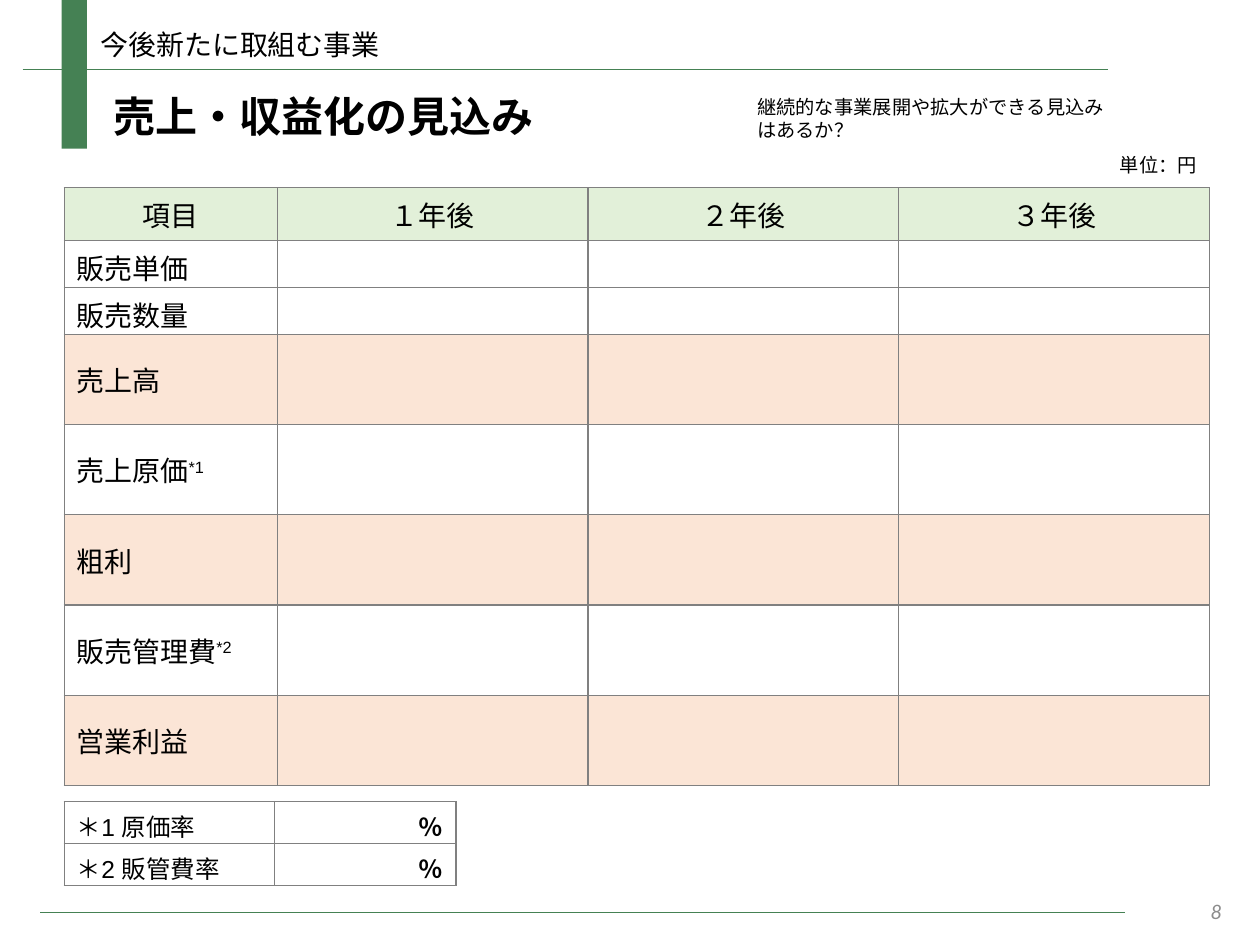
from dataclasses import dataclass
from typing import NamedTuple

from lxml.etree import SubElement
from pptx import Presentation
from pptx.dml.color import RGBColor
from pptx.enum.shapes import MSO_CONNECTOR, MSO_SHAPE
from pptx.enum.text import MSO_ANCHOR, PP_ALIGN
from pptx.oxml.ns import qn
from pptx.util import Pt


@dataclass(frozen=True)
class Theme:
    green: str = "458154"
    header: str = "E2F0D9"
    total: str = "FBE5D6"
    grid: str = "808080"
    ink: str = "000000"
    muted: str = "8C8C8C"
    latin: str = "Arial"
    number: str = "Calibri"
    japanese: str = "Noto Sans CJK JP"
    title: float = 24
    body: float = 16
    footnote: float = 14
    page: float = 12
    small: float = 11
    line: float = 0.75


T = Theme()


class Style(NamedTuple):
    size: float
    align: PP_ALIGN = PP_ALIGN.LEFT
    bold: bool = False
    italic: bool = False
    font: str = T.latin
    color: str = T.ink


class Label(NamedTuple):
    text: str
    box: tuple[float, float, float, float]
    style: Style
    anchor: MSO_ANCHOR = MSO_ANCHOR.TOP


class Cell(NamedTuple):
    text: str
    style: Style
    mark: str = ""


class Row(NamedTuple):
    height: float
    cells: list[Cell]
    fill: str = ""
    tight: bool = False


def rgb(value: str) -> RGBColor:
    return RGBColor.from_string(value)


def write(p, text: str, style: Style, mark: str = "") -> None:
    """Fill a paragraph; mark is an optional superscript note."""
    p.alignment = style.align
    f = p.font
    f.name, f.size = style.font, Pt(style.size)
    f.bold, f.italic = style.bold, style.italic
    f.color.rgb = rgb(style.color)
    SubElement(p._p.pPr.find(qn("a:defRPr")), qn("a:ea"), typeface=T.japanese)
    if text:
        p.add_run().text = text
    if mark:
        r = p.add_run()
        r.text = mark
        r._r.get_or_add_rPr().set("baseline", "30000")


def add_label(s, label: Label) -> None:
    tf = s.shapes.add_textbox(*map(Pt, label.box)).text_frame
    tf.word_wrap = True
    tf.vertical_anchor = label.anchor
    write(tf.paragraphs[0], label.text, label.style)


def add_rule(s, left: float, top: float, width: float) -> None:
    line = s.shapes.add_connector(
        MSO_CONNECTOR.STRAIGHT, Pt(left), Pt(top), Pt(left + width), Pt(top))
    line.line.color.rgb = rgb(T.green)
    line.line.width = Pt(T.line)
    SubElement(line._element.spPr, qn("a:effectLst"))


def add_borders(cell) -> None:
    tc_pr = cell._tc.get_or_add_tcPr()
    for i, side in enumerate(("lnL", "lnR", "lnT", "lnB")):
        ln = SubElement(tc_pr, qn(f"a:{side}"), w=str(Pt(T.line)))
        SubElement(SubElement(ln, qn("a:solidFill")), qn("a:srgbClr"), val=T.grid)
        tc_pr.remove(ln)
        tc_pr.insert(i, ln)


def add_grid(s, left: float, top: float, widths: list[float], rows: list[Row]) -> None:
    heights = [row.height for row in rows]
    table = s.shapes.add_table(len(rows), len(widths), Pt(left), Pt(top),
                               Pt(sum(widths)), Pt(sum(heights))).table
    table.first_row = table.horz_banding = False
    for column, width in zip(table.columns, widths):
        column.width = Pt(width)
    for i, row in enumerate(rows):
        table.rows[i].height = Pt(row.height)
        for cell, content in zip(table.rows[i].cells, row.cells):
            cell.vertical_anchor = MSO_ANCHOR.MIDDLE
            if row.tight:
                cell.margin_bottom = Pt(0)
            if row.fill:
                cell.fill.solid()
                cell.fill.fore_color.rgb = rgb(row.fill)
            else:
                cell.fill.background()
            add_borders(cell)
            write(cell.text_frame.paragraphs[0], content.text, content.style,
                  content.mark)


BODY = Style(T.body)
HEAD = Style(T.body, PP_ALIGN.CENTER)
NOTE = Style(T.footnote)
PERCENT = Style(T.footnote, PP_ALIGN.RIGHT, bold=True, font=T.japanese)


def item_row(name: str, mark: str = "", height: float = 51.6, fill: str = "",
             tight: bool = False) -> Row:
    return Row(height, [Cell(name, BODY, mark)] + [Cell("", BODY)] * 3, fill, tight)


def rate_row(name: str) -> Row:
    return Row(24, [Cell(name, NOTE), Cell("％", PERCENT)], tight=True)


FORECAST = [
    Row(30.3, [Cell(t, HEAD) for t in ("項目", "１年後", "２年後", "３年後")], T.header),
    item_row("販売単価", height=26.5, tight=True),
    item_row("販売数量", height=26.5, tight=True),
    item_row("売上高", fill=T.total),
    item_row("売上原価", "*1"),
    item_row("粗利", fill=T.total),
    item_row("販売管理費", "*2"),
    item_row("営業利益", fill=T.total),
]
RATES = [rate_row("＊1 原価率"), rate_row("＊2 販管費率")]

LABELS = [
    Label("8", (543, 506, 162, 29),
          Style(T.page, PP_ALIGN.RIGHT, italic=True, font=T.number, color=T.muted),
          MSO_ANCHOR.MIDDLE),
    Label("売上・収益化の見込み", (57.6, 48.2, 307.4, 36), Style(T.title, bold=True)),
    Label("継続的な事業展開や拡大ができる見込みはあるか？",
          (425.5, 51.1, 215.3, 33.8), Style(T.small)),
    Label("単位：円", (619.2, 84.2, 72, 21), Style(T.small, PP_ALIGN.RIGHT)),
    Label("今後新たに取組む事業", (50.4, 12.2, 270.7, 26.6), BODY),
]


def main() -> None:
    prs = Presentation()
    prs.slide_width, prs.slide_height = Pt(720), Pt(540)
    s = prs.slides.add_slide(prs.slide_layouts[6])

    bar = s.shapes.add_shape(MSO_SHAPE.RECTANGLE, Pt(35.3), Pt(0), Pt(14.4), Pt(85))
    bar.shadow.inherit = False
    bar.fill.solid()
    bar.fill.fore_color.rgb = rgb(T.green)
    bar.line.fill.background()
    add_rule(s, 13, 39.6, 620)
    add_rule(s, 23, 521.3, 620)

    add_grid(s, 36.7, 107.3, [121.7] + [177.6] * 3, FORECAST)
    add_grid(s, 36.7, 457.9, [120.2, 103.7], RATES)
    for label in LABELS:
        add_label(s, label)
    prs.save("out.pptx")


if __name__ == "__main__":
    main()
